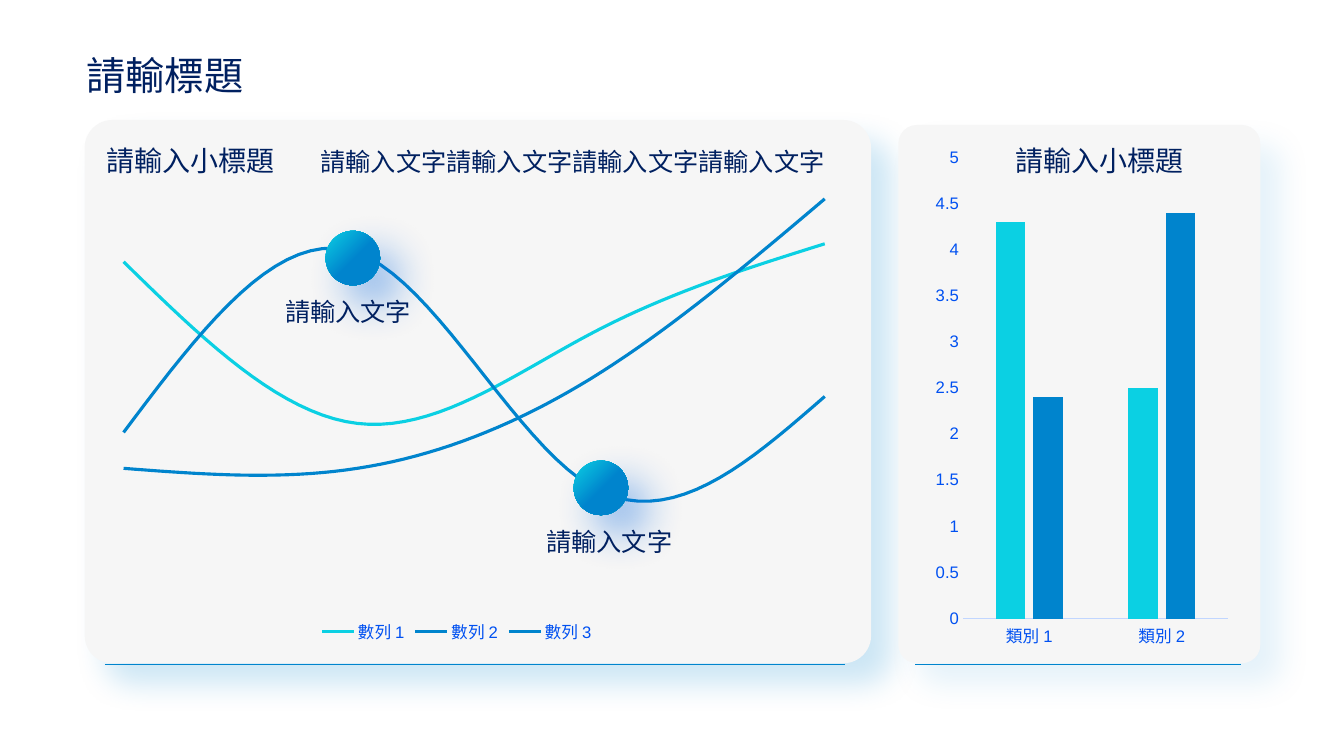
"""Build a slide with a smoothed line chart and a column chart on two shadowed panels."""
from lxml import etree
from pptx import Presentation
from pptx.chart.data import CategoryChartData
from pptx.dml.color import RGBColor
from pptx.enum.chart import XL_CHART_TYPE, XL_LEGEND_POSITION, XL_TICK_MARK
from pptx.enum.shapes import MSO_CONNECTOR, MSO_SHAPE
from pptx.enum.text import MSO_ANCHOR, PP_ALIGN
from pptx.oxml import parse_xml
from pptx.oxml.ns import nsdecls, qn
from pptx.util import Inches, Pt

LINE_CHART = XL_CHART_TYPE.LINE
COLUMN_CHART = XL_CHART_TYPE.COLUMN_CLUSTERED
LEGEND_BOTTOM = XL_LEGEND_POSITION.BOTTOM
NO_TICK = XL_TICK_MARK.NONE
ROUNDED = MSO_SHAPE.ROUNDED_RECTANGLE
CIRCLE = MSO_SHAPE.OVAL
STRAIGHT = MSO_CONNECTOR.STRAIGHT
TOP = MSO_ANCHOR.TOP
LEFT = PP_ALIGN.LEFT

COLORS = {
    "navy": "002060",
    "cyan": "0BD0E3",
    "blue": "0084CD",
    "label": "0050F1",
    "axis": "C1D6FF",
    "panel": "F6F6F6",
    "glow": "0868DE",
}
RGB = {name: RGBColor.from_string(value) for name, value in COLORS.items()}
CJK_FONT = "Noto Sans CJK SC"
LATIN_FONT = "Arial"

presentation = Presentation()
presentation.slide_width = Inches(13.33)
presentation.slide_height = Inches(7.5)
slide = presentation.slides.add_slide(presentation.slide_layouts[5])
shapes = slide.shapes


def write_text(text, box=None, shape=None, size=18, font=LATIN_FONT, wrap=True):
    """Write one left-aligned line into a shape, or into a new text box."""
    if shape is None:
        shape = shapes.add_textbox(*map(Inches, box))
    frame = shape.text_frame
    frame.word_wrap = wrap
    frame.vertical_anchor = TOP
    paragraph = frame.paragraphs[0]
    paragraph.alignment = LEFT
    run = paragraph.add_run()
    run.text = text
    run.font.size = Pt(size)
    run.font.color.rgb = RGB["navy"]
    run.font.name = font
    etree.SubElement(run.font._element, qn("a:ea"), typeface=CJK_FONT)


def add_shadowed(kind, box, color, alpha, blur, distance):
    """Add an outline-free shape with a soft shadow to the lower right."""
    shape = shapes.add_shape(kind, *map(Inches, box))
    shape.line.fill.background()
    shape.shadow.inherit = False
    effects = shape._element.spPr.find(qn("a:effectLst"))
    effects.append(parse_xml(
        f'<a:outerShdw {nsdecls("a")} blurRad="{Pt(blur)}" dist="{Pt(distance)}" '
        f'dir="2700000" algn="tl" rotWithShape="0"><a:srgbClr val="{COLORS[color]}">'
        f'<a:alpha val="{alpha * 1000}"/></a:srgbClr></a:outerShdw>'))
    return shape


title = shapes.title
title.left, title.top, title.width, title.height = map(Inches, (0.76, 0.46, 1.76, 0.57))
write_text("請輸標題", shape=title, size=28, font=CJK_FONT, wrap=False)

panels = [
    ((0.84, 1.19, 7.8, 5.39), 20, 1.04, 8.38),
    ((8.91, 1.24, 3.59, 5.34), 10, 9.08, 12.31),
]
for box, alpha, start, end in panels:
    panel = add_shadowed(ROUNDED, box, "blue", alpha, 22, 21)
    panel.adjustments[0] = 0.051
    panel.fill.solid()
    panel.fill.fore_color.rgb = RGB["panel"]
    rule = shapes.add_connector(STRAIGHT, Inches(start), Inches(6.59), Inches(end), Inches(6.59))
    rule.line.color.rgb = RGB["blue"]
    rule.line.width = Pt(1)
    etree.SubElement(rule._element.spPr, qn("a:effectLst"))

charts = [
    (LINE_CHART, (-0.28, 0.68, 9.62, 5.75), ["1", "2", "3", "4"], 120, 20, [
        ("數列 1", (86, 50, 70, 90), "cyan"),
        ("數列 2", (48, 88, 36, 56), "blue"),
        ("數列 3", (40, 40, 60, 100), "blue"),
    ]),
    (COLUMN_CHART, (9.22, 1.37, 3.02, 5.16), ["類別 1", "類別 2"], 5, 0.5, [
        ("Series 1", (4.3, 2.5), "cyan"),
        ("Series 2", (2.4, 4.4), "blue"),
    ]),
]
for kind, box, categories, maximum, step, series_rows in charts:
    data = CategoryChartData()
    data.categories = categories
    for name, values, color in series_rows:
        data.add_series(name, values)
    chart = shapes.add_chart(kind, *map(Inches, box), data).chart
    chart.has_title = False
    chart.has_legend = kind == LINE_CHART
    chart.font.size = Pt(11.9)
    chart.font.name = LATIN_FONT
    chart.font.color.rgb = RGB["label"]
    value_axis, category_axis = chart.value_axis, chart.category_axis
    value_axis.minimum_scale = 0
    value_axis.maximum_scale = maximum
    value_axis.major_unit = step
    value_axis.has_major_gridlines = False
    value_axis.format.line.fill.background()
    category_axis.format.line.color.rgb = RGB["axis"]
    category_axis.format.line.width = Pt(0.75)
    for axis in (value_axis, category_axis):
        axis.major_tick_mark = NO_TICK
        axis.visible = kind == COLUMN_CHART
    plot = chart.plots[0]
    plot.vary_by_categories = False
    for series, (name, values, color) in zip(plot.series, series_rows):
        if kind == LINE_CHART:
            series.smooth = True
            series.format.line.color.rgb = RGB[color]
            series.format.line.width = Pt(2.25)
        else:
            series.format.fill.solid()
            series.format.fill.fore_color.rgb = RGB[color]
    if kind == LINE_CHART:
        chart.legend.position = LEGEND_BOTTOM
        chart.legend.include_in_layout = False
        plot_area = chart._chartSpace.chart.plotArea
        for layout in plot_area.findall(qn("c:layout")):
            plot_area.remove(layout)
        plot_area.insert(0, parse_xml(
            f'<c:layout {nsdecls("c")}><c:manualLayout><c:layoutTarget val="inner"/>'
            '<c:xMode val="edge"/><c:yMode val="edge"/><c:x val="0.036"/><c:y val="0.07"/>'
            '<c:w val="0.964"/><c:h val="0.93"/></c:manualLayout></c:layout>'))
    else:
        plot.gap_width = 219
        plot.overlap = -27

for left, top, label_left in [(5.69, 4.57, 5.32), (3.23, 2.29, 2.73)]:
    marker = add_shadowed(CIRCLE, (left, top, 0.54, 0.54), "glow", 44, 30, 20)
    marker.fill.gradient()
    marker.fill.gradient_angle = 315
    for stop, color, position in zip(marker.fill.gradient_stops, ("cyan", "blue"), (0, 0.53)):
        stop.color.rgb = RGB[color]
        stop.position = position
    write_text("請輸入文字", (label_left, top + 0.6, 1.7, 0.4))

for left in (0.96, 9.97):
    write_text("請輸入小標題", (left, 1.37, 2.27, 0.44), size=20, font=CJK_FONT)
write_text("請輸入文字" * 4, (3.08, 1.4, 5.76, 0.4))

presentation.save("out.pptx")
